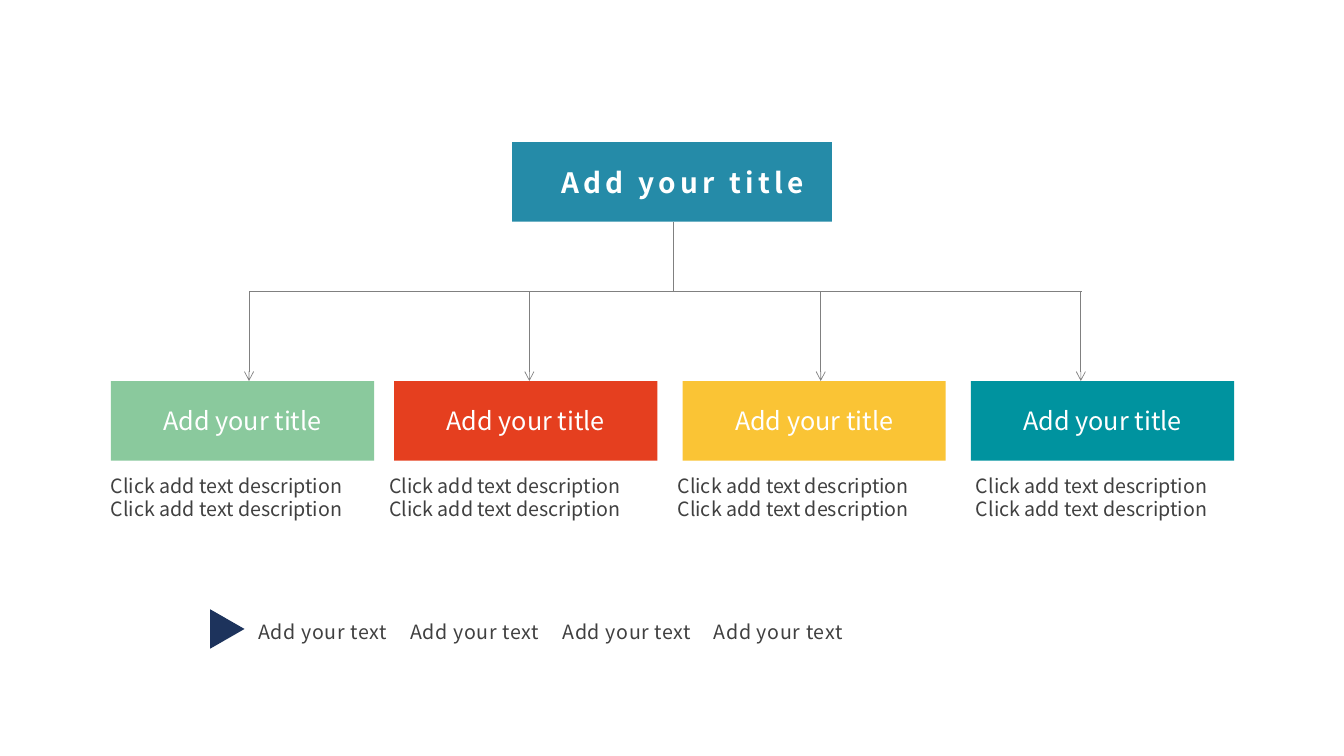
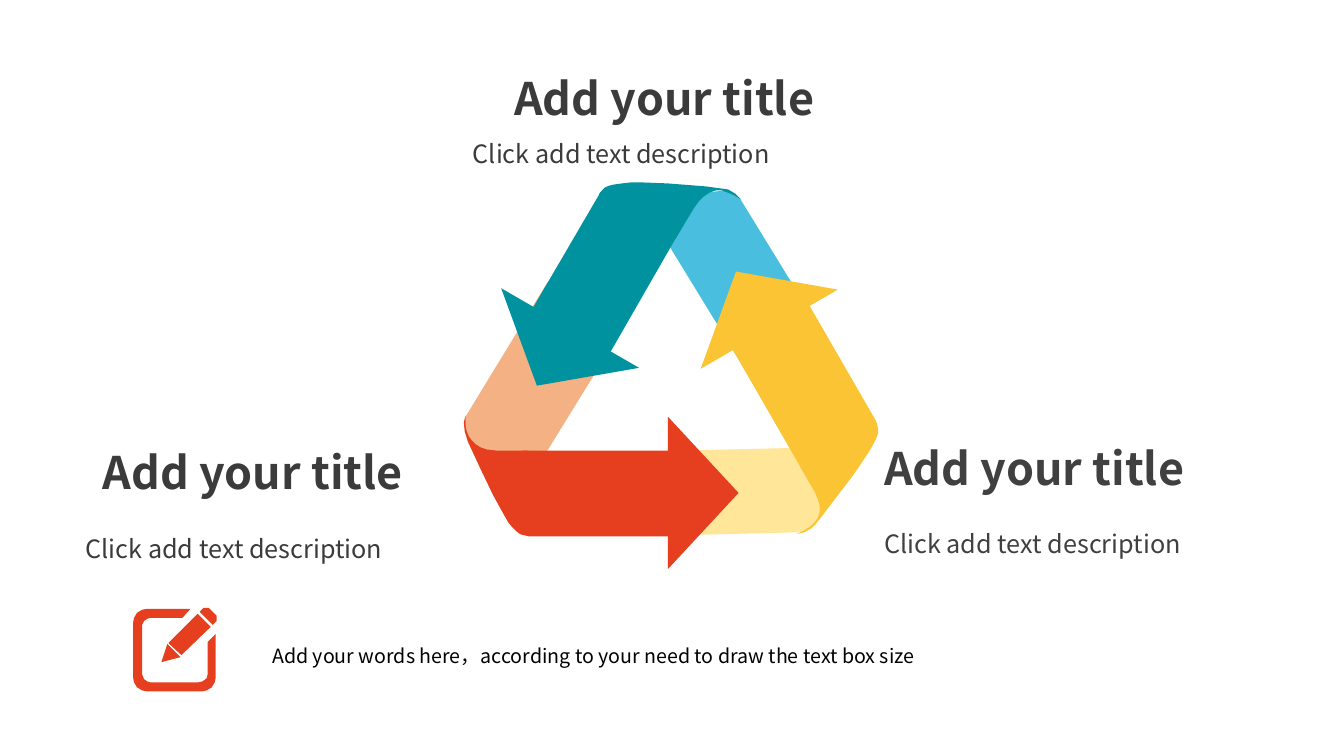
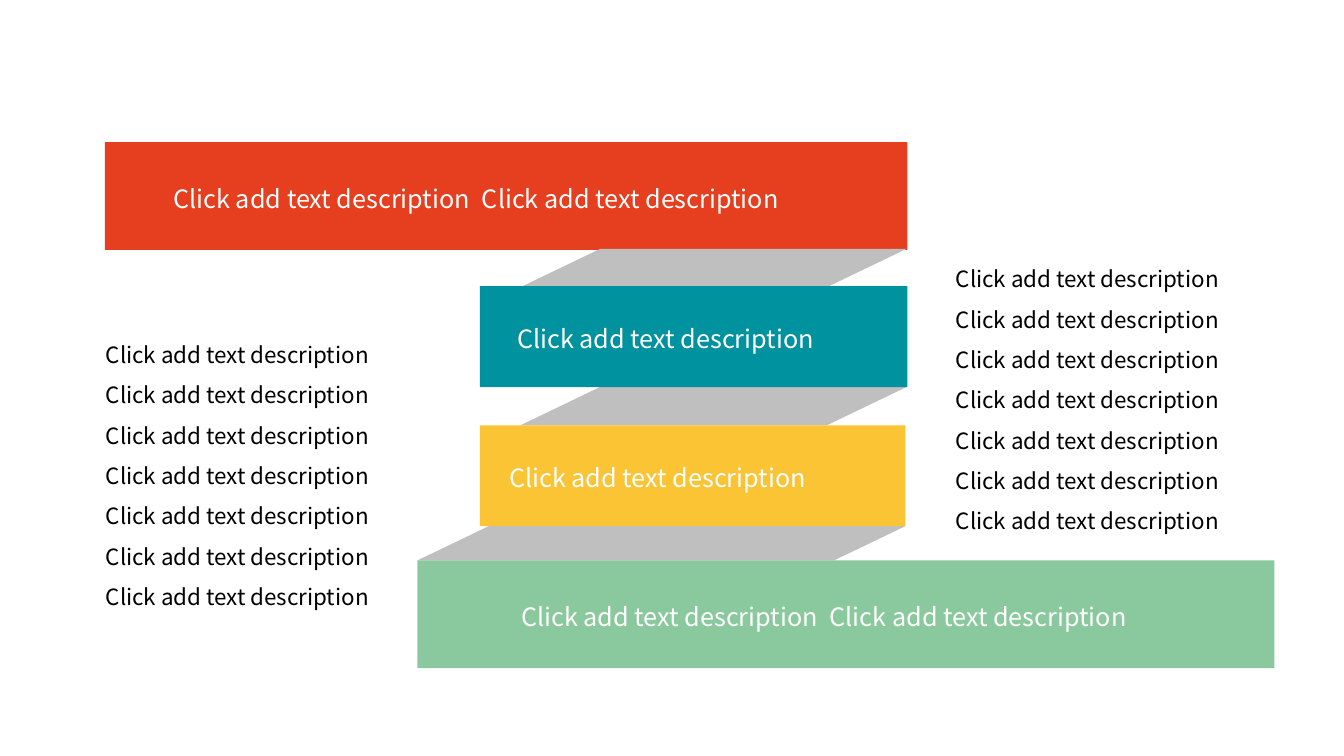
from lxml.etree import SubElement as Sub
from pptx import Presentation
from pptx.dml.color import RGBColor as RGB
from pptx.enum.shapes import MSO_CONNECTOR as Conn, MSO_SHAPE as Kind
from pptx.enum.text import MSO_ANCHOR as Anchor, MSO_AUTO_SIZE as Fit, PP_ALIGN as Align
from pptx.oxml.ns import qn
from pptx.util import Pt

PX = 9144
FONT = "Noto Sans CJK JP"
WHITE = RGB(0xFF, 0xFF, 0xFF)
BLACK = RGB(0x00, 0x00, 0x00)
INK = RGB(0x40, 0x40, 0x40)
DARK = RGB(0x3B, 0x3B, 0x3B)
RULE = RGB(0x80, 0x80, 0x80)
SHADE = RGB(0xBF, 0xBF, 0xBF)
NAVY = RGB(0x1D, 0x33, 0x5C)
BLUE = RGB(0x25, 0x8B, 0xA8)
SKY = RGB(0x4A, 0xBE, 0xDE)
TEAL = RGB(0x00, 0x93, 0x9F)
GREEN = RGB(0x8A, 0xC9, 0x9D)
RED = RGB(0xE5, 0x3F, 0x1F)
PEACH = RGB(0xF4, 0xB1, 0x83)
GOLD = RGB(0xFA, 0xC4, 0x35)
CREAM = RGB(0xFF, 0xE6, 0x99)
HEAD = "Add your title"
LINE = "Click add text description"

TAILS = [
    (PEACH, [(160, 142), (54, 314), (1, 249), (2, 233), (83, 100)]),
    (SKY, [(284, 195), (175, 17), (260, 9), (274, 17), (358, 154)]),
    (CREAM, [(176, 268), (384, 263), (349, 341), (334, 348), (174, 352)]),
]
ARROWS = [
    (TEAL, (10, 141, 158, 66), 210,
     [(133, 191), (215, 48), (176, 26), (136, 10), (56, 147)],
     [(210, 57), (134, 13), (137, 9), (140, 6), (145, 4), (150, 3), (157, 2), (166, 1),
      (176, 1), (202, 2), (240, 5), (262, 8), (269, 12), (275, 18), (270, 15), (264, 12),
      (256, 9), (250, 9), (244, 11), (238, 15), (233, 20), (228, 27)]),
    (GOLD, (208, 85, 157, 66), 330,
     [(254, 145), (336, 287), (375, 264), (409, 238), (330, 101)],
     [(333, 282), (409, 238), (410, 241), (411, 246), (411, 250), (409, 255), (406, 261),
      (402, 268), (396, 277), (390, 286), (382, 297), (372, 310), (353, 335), (345, 344),
      (338, 348), (330, 350), (338, 346), (344, 342), (348, 338), (351, 334), (353, 328),
      (353, 322), (351, 315), (348, 308)]),
    (RED, (162, 274, 151, 70), 90,
     [(232, 267), (58, 267), (58, 311), (64, 352), (232, 352)],
     [(64, 267), (64, 352), (60, 351), (56, 350), (52, 347), (48, 343), (44, 338),
      (40, 331), (35, 322), (29, 311), (17, 286), (4, 258), (1, 248), (0, 239), (2, 232),
      (2, 244), (3, 248), (5, 253), (8, 257), (12, 261), (17, 264), (23, 266), (32, 267)]),
]
PENCIL = [
    [(83, 14), (79, 18), (66, 5), (70, 1), (75, 1), (83, 9)],
    [(48, 48), (35, 36), (64, 7), (77, 20)],
    [(47, 50), (28, 55), (34, 37)],
    [(17, 11), (14, 12), (11, 14), (9, 18), (9, 67), (11, 72), (14, 74), (17, 75),
     (65, 75), (69, 74), (73, 71), (74, 67), (74, 35), (82, 27), (82, 70), (81, 75),
     (78, 80), (73, 83), (68, 84), (14, 84), (9, 83), (4, 80), (1, 75), (0, 70),
     (0, 16), (1, 11), (4, 6), (9, 3), (14, 2), (57, 2), (49, 11)],
]


def emu(*vals):
    """Turn px lengths into EMU."""
    return [val * PX for val in vals]


def write(shape, text, size=14, color=INK, bold=False, align=Align.LEFT,
          anchor=Anchor.TOP, inset=(0, 0, 0, 0), lead=1.0, tabs=(), track=0):
    """Fill a shape with text, one paragraph for each line."""
    frame = shape.text_frame
    frame.word_wrap = True
    frame.auto_size = Fit.NONE
    frame.vertical_anchor = anchor
    (frame.margin_left, frame.margin_top,
     frame.margin_right, frame.margin_bottom) = emu(*inset)
    for num, line in enumerate(text.split("\n")):
        para = frame.add_paragraph() if num else frame.paragraphs[0]
        props = para._p.get_or_add_pPr()
        if tabs:
            stops = Sub(props, qn("a:tabLst"))
            for tab in tabs:
                Sub(stops, qn("a:tab"), pos=str(tab * PX), algn="l")
        else:
            props.set("marL", "0")
            props.set("indent", "0")
            Sub(props, qn("a:buNone"))
        para.alignment = align
        para.line_spacing = Pt(round(size * 1.2 * lead, 2))
        para.space_before = para.space_after = Pt(0)
        run = para.add_run()
        run.text = line
        font = run.font
        font.size, font.bold, font.name = Pt(size), bold, FONT
        font.color.rgb = color
        mark = run._r.get_or_add_rPr()
        Sub(mark, qn("a:ea"), typeface=FONT)
        if track:
            mark.set("spc", str(track))


def place(shape, box):
    """Move a placeholder to a box."""
    shape.left, shape.top, shape.width, shape.height = emu(*box)
    return shape


def paint(shape, color):
    """Give a shape a flat fill."""
    shape.fill.solid()
    shape.fill.fore_color.rgb = color


def block(slide, kind, box, color, turn=0):
    """Add a flat preset shape."""
    shape = slide.shapes.add_shape(kind, *emu(*box))
    shape.shadow.inherit = False
    shape.rotation = turn
    paint(shape, color)
    shape.line.fill.background()
    return shape


def label(slide, box, text, **look):
    """Add a text box."""
    write(slide.shapes.add_textbox(*emu(*box)), text, **look)


def rule(slide, start, end, arrow=False):
    """Add a thin line, with an arrowhead if asked."""
    line = slide.shapes.add_connector(Conn.STRAIGHT, *emu(*start, *end))
    line.line.color.rgb = RULE
    line.line.width = Pt(0.5)
    if arrow:
        Sub(line.line._get_or_add_ln(), qn("a:tailEnd"), type="arrow")
    Sub(line._element.spPr, qn("a:effectLst"))


def outline(slide, left, top, color, *rings):
    """Add a flat freeform made of closed rings."""
    rings = [[(left + x, top + y) for x, y in ring] for ring in rings]
    path = slide.shapes.build_freeform(*rings[0][0], scale=PX)
    for num, ring in enumerate(rings):
        if num:
            path.move_to(*ring[0])
        path.add_line_segments(ring[1:], close=True)
    shape = path.convert_to_shape()
    shape.shadow.inherit = False
    paint(shape, color)
    shape.line.fill.background()


def tree(slide, left, top):
    """Place the root title, the branches and their notes."""
    root = place(slide.shapes.title, (left + 398, top, 317, 79))
    paint(root, BLUE)
    write(root, HEAD, size=20, color=WHITE, bold=True, align=Align.CENTER,
          anchor=Anchor.MIDDLE, inset=(31, 0, 10, 0), track=300)
    bar, tip = top + 148, top + 237
    rule(slide, (left + 558, top + 79), (left + 558, bar))
    rule(slide, (left + 137, bar), (left + 963, bar))
    nodes = [(0, 137, 0, GREEN), (281, 415, 276, RED),
             (567, 704, 562, GOLD), (853, 962, 858, TEAL)]
    for box, stem, note, color in nodes:
        rule(slide, (left + stem, bar), (left + stem, tip), arrow=True)
        node = block(slide, Kind.RECTANGLE, (left + box, tip, 261, 79), color)
        write(node, HEAD, size=18, color=WHITE, align=Align.CENTER, anchor=Anchor.MIDDLE)
        label(slide, (left + note, top + 329, 256, 50), f"{LINE}\n{LINE}")


def key(slide, left, top):
    """Place the pointer and its row of words."""
    block(slide, Kind.ISOSCELES_TRIANGLE, (left, top, 39, 34), NAVY, turn=90)
    label(slide, (left + 50, top + 8, 873, 26), "\t".join(["Add your text"] * 4),
          tabs=[151, 302, 452], track=45)


def cycle(slide, left, top):
    """Place the folded arrows of the triangle."""
    for color, ring in TAILS:
        outline(slide, left, top, color, ring)
    for color, (x, y, wide, tall), turn, shaft, curl in ARROWS:
        box = (left + x, top + y, wide, tall)
        block(slide, Kind.ISOSCELES_TRIANGLE, box, color, turn)
        outline(slide, left, top, color, shaft)
        outline(slide, left, top, color, curl)


def corner(slide, left, top, color, shift, drop, title=None):
    """Place a heading and the line below it."""
    box = (left, top, 330, 54)
    shape = place(title, box) if title else slide.shapes.add_textbox(*emu(*box))
    write(shape, HEAD, size=32, color=color, bold=True)
    label(slide, (left + shift, top + drop, 350, 30), LINE, size=18, color=color)


def hint(slide, left, top):
    """Place the pencil icon and its sentence."""
    outline(slide, left, top, RED, *PENCIL)
    label(slide, (left + 138, top + 37, 885, 26),
          "Add your words here，according to your need to draw the text box size",
          color=BLACK)


def stair(slide, left, top):
    """Place the four bands and the folds between them."""
    bands = [(0, 0, 796, 107, RED, 68, 2), (372, 143, 424, 100, TEAL, 37, 1),
             (372, 281, 422, 100, GOLD, 29, 1), (310, 415, 850, 107, GREEN, 103, 2)]
    folds = [(412, 106, 383, 38), (412, 243, 383, 38), (310, 381, 484, 34)]
    for x, y, wide, tall in folds:
        fold = block(slide, Kind.PARALLELOGRAM, (left + x, top + y, wide, tall), SHADE)
        fold.adjustments[0] = 2.08
    for x, y, wide, tall, color, pad, count in bands:
        box = (left + x, top + y, wide, tall)
        if y:
            band = block(slide, Kind.RECTANGLE, box, color)
        else:
            band = place(slide.shapes.title, box)
            paint(band, color)
        write(band, "\t".join([LINE] * count), size=18, color=WHITE,
              inset=(pad, (tall - 25) // 2, 0, 0), tabs=[306])


def column(body, left, top):
    """Place a list of seven lines."""
    write(place(body, (left, top, 320, 290)), "\n".join([LINE] * 7),
          size=16, color=BLACK, lead=1.5)


def main():
    """Build the three slides."""
    deck = Presentation()
    deck.slide_width, deck.slide_height = emu(1333, 750)
    only, two = deck.slide_layouts[5], deck.slide_layouts[3]

    slide = deck.slides.add_slide(only)
    tree(slide, 110, 141)
    key(slide, 206, 607)

    slide = deck.slides.add_slide(only)
    cycle(slide, 460, 180)
    corner(slide, 102, 441, DARK, -17, 88)
    corner(slide, 877, 437, INK, 0, 87)
    corner(slide, 510, 70, DARK, -41, 67, slide.shapes.title)
    hint(slide, 132, 602)

    slide = deck.slides.add_slide(two)
    stair(slide, 104, 141)
    column(slide.placeholders[1], 105, 325)
    column(slide.placeholders[2], 948, 250)
    deck.save("out.pptx")


if __name__ == "__main__":
    main()
